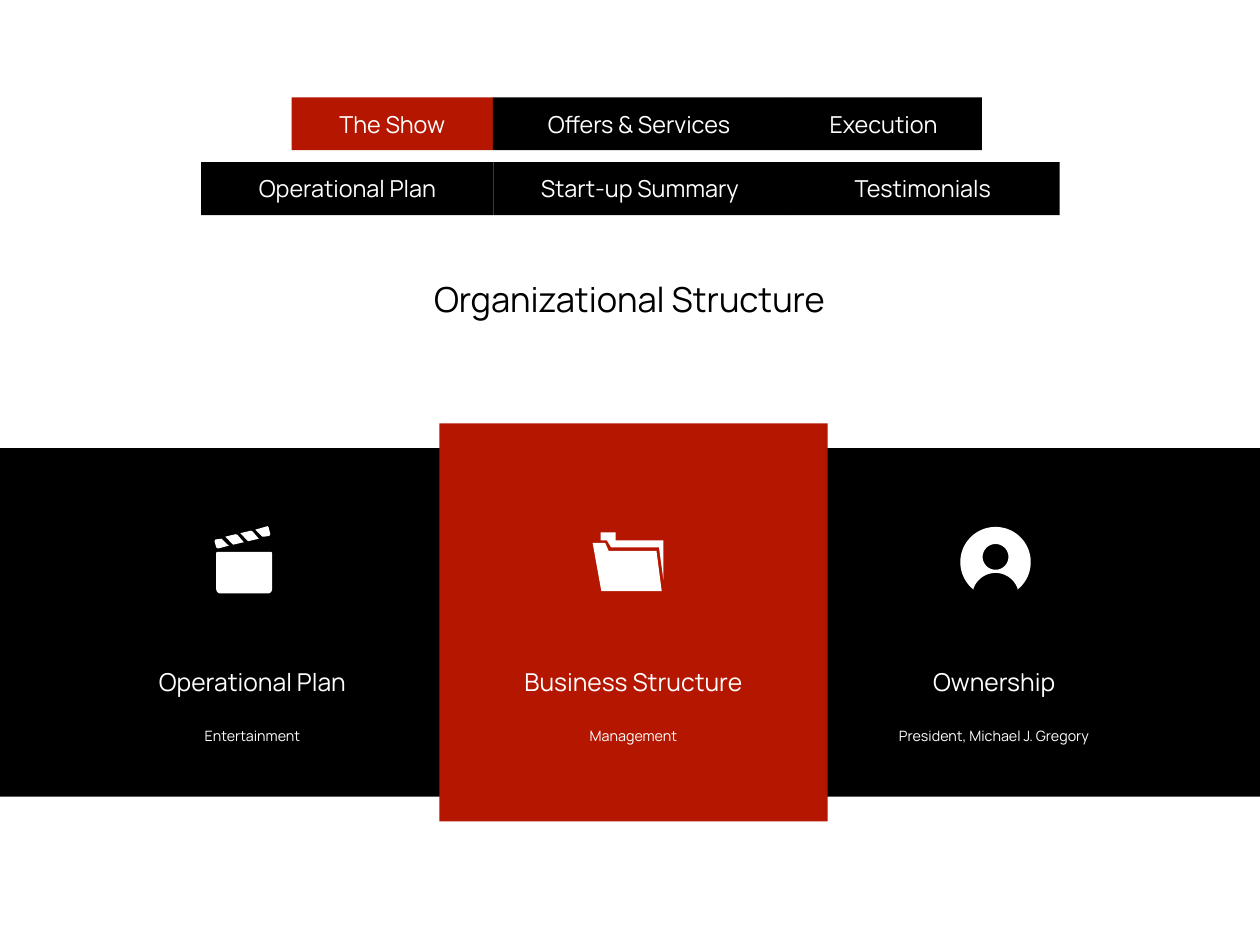
from dataclasses import dataclass
from math import cos, radians, sin

from pptx import Presentation
from pptx import util as u
from pptx.dml import color
from pptx.enum import shapes, text


@dataclass(frozen=True)
class Theme:
    font: str = "Manrope"
    black: str = "000000"
    red: str = "B41600"
    white: str = "FFFFFF"
    title: int = 28
    head: int = 20
    tab: int = 19


THEME = Theme()
WIDE, HIGH = 36.12, 27.1


def write(shape, words, size, tint, anchor=text.MSO_ANCHOR.MIDDLE, space=None, base=None):
    frame = shape.text_frame
    frame.word_wrap = True
    frame.auto_size = text.MSO_AUTO_SIZE.NONE
    frame.vertical_anchor = anchor
    frame.margin_left = frame.margin_right = u.Cm(0.08)
    frame.margin_top = frame.margin_bottom = u.Cm(0.08)
    para = frame.paragraphs[0]
    para.alignment = text.PP_ALIGN.CENTER
    if space:
        para.line_spacing = space
    run = para.add_run()
    run.text = words
    run.font.name = THEME.font
    run.font.size = u.Pt(size)
    run.font.color.rgb = color.RGBColor.from_string(tint)
    if base:
        run._r.get_or_add_rPr().set("baseline", str(base * 1000))


def paint(shape, tint):
    shape.shadow.inherit = False
    shape.fill.solid()
    shape.fill.fore_color.rgb = color.RGBColor.from_string(tint)
    shape.line.fill.background()


def block(slide, box, tint):
    shape = slide.shapes.add_shape(shapes.MSO_SHAPE.RECTANGLE, *map(u.Cm, box))
    paint(shape, tint)
    return shape


def label(slide, box, words, **style):
    shape = slide.shapes.add_textbox(*map(u.Cm, box))
    write(shape, words, THEME.head, THEME.white, text.MSO_ANCHOR.TOP, **style)


def arc(x, y, r, start, end, steps):
    turns = [radians(start + (end - start) * i / steps) for i in range(steps + 1)]
    return [(x + r * cos(t), y + r * sin(t)) for t in turns]


def clapper():
    slab = (arc(0.08, 0.77, 0.03, 180, 270, 4) + arc(1.62, 0.77, 0.03, 270, 360, 4)
            + arc(1.53, 1.81, 0.12, 0, 90, 8) + arc(0.17, 1.81, 0.12, 90, 180, 8))
    stripe = [(0.74, 0.2), (1.04, 0.13), (1.09, 0.15), (1.27, 0.36), (0.97, 0.43), (0.94, 0.41)]
    twin = [(x - 0.43, y + 0.1) for x, y in stripe]
    tip = [(1.17, 0.1), (1.52, 0), (1.55, 0.03), (1.6, 0.23), (1.57, 0.28), (1.42, 0.3), (1.37, 0.3)]
    hinge = [(0.41, 0.56), (0.1, 0.64), (0.05, 0.61), (0, 0.43), (0.03, 0.38), (0.2, 0.36), (0.3, 0.46)]
    return [[part] for part in (slab, stripe, twin, tip, hinge)]


def folder():
    back = [(0.23, 0), (0.66, 0), (0.66, 0.23), (2.03, 0.23), (2.03, 1.37),
            (1.91, 0.48), (1.91, 0.43), (0.53, 0.43), (0.41, 0.23), (0.23, 0.23)]
    front = [(0, 0.3), (0.36, 0.3), (0.46, 0.53), (1.83, 0.53), (1.98, 1.68), (0.25, 1.68)]
    return [[back], [front]]


def person():
    disc = arc(1.01, 1.01, 1.01, 129, 411, 60)
    torso = arc(1.01, 1.99, 0.67, -16, -164, 30)
    face = arc(1.01, 0.86, 0.37, 360, 0, 40)
    return [[disc + torso, face]]


def icon(slide, left, top, parts):
    group = slide.shapes.add_group_shape()
    for rings in parts:
        pen = None
        for ring in rings:
            first, *rest = [(u.Cm(left + x), u.Cm(top + y)) for x, y in ring]
            if pen is None:
                pen = group.shapes.build_freeform(*first)
            else:
                pen.move_to(*first)
            pen.add_line_segments(rest, close=True)
        paint(pen.convert_to_shape(), THEME.white)


def tabs(slide, box, items):
    left, top, high = box
    for words, wide, tint in items:
        write(block(slide, (left, top, wide, high), tint), words, THEME.tab, THEME.white)
        left += wide


def heading(slide, box, words):
    title = slide.shapes.title
    title.left, title.top, title.width, title.height = map(u.Cm, box)
    write(title, words, THEME.title, THEME.black)


def card(slide, box, words, note, parts, shift):
    left, top, wide = box
    icon(slide, left + shift[0], top + shift[1], parts)
    label(slide, (left + (wide - 6.73) / 2, top + 2.94, 6.73, 1.5), words, space=2.2)
    label(slide, (left, top + 5.6, wide, 0.71), note, base=30)


def panel(slide, box):
    left, top, wide, high = box
    block(slide, box, THEME.black)
    block(slide, (left + 12.6, top - 0.71, 11.13, high + 1.42), THEME.red)
    cards = [
        (2.67, "Operational Plan", "Entertainment", clapper(), (3.48, 0)),
        (13.59, "Business Structure", "Management", folder(), (3.4, 0.18)),
        (23.93, "Ownership", "President, Michael J. Gregory", person(), (3.6, 0.02)),
    ]
    for x, *rest in cards:
        card(slide, (left + x, top + 2.24, 9.14), *rest)


def main():
    deck = Presentation()
    deck.slide_width, deck.slide_height = u.Cm(WIDE), u.Cm(HIGH)
    slide = deck.slides.add_slide(deck.slide_layouts[5])
    tabs(slide, (8.36, 2.79, 1.52), [
        ("The Show", 5.77, THEME.red),
        ("Offers & Services", 8.38, THEME.black),
        ("Execution", 5.64, THEME.black),
    ])
    tabs(slide, (5.77, 4.65, 1.52), [
        ("Operational Plan", 8.38, THEME.black),
        ("Start-up Summary", 8.38, THEME.black),
        ("Testimonials", 7.85, THEME.black),
    ])
    heading(slide, (11.86, 7.8, 12.37, 1.52), "Organizational Structure")
    panel(slide, (0, 12.85, WIDE, 10))
    deck.save("out.pptx")


if __name__ == "__main__":
    main()
